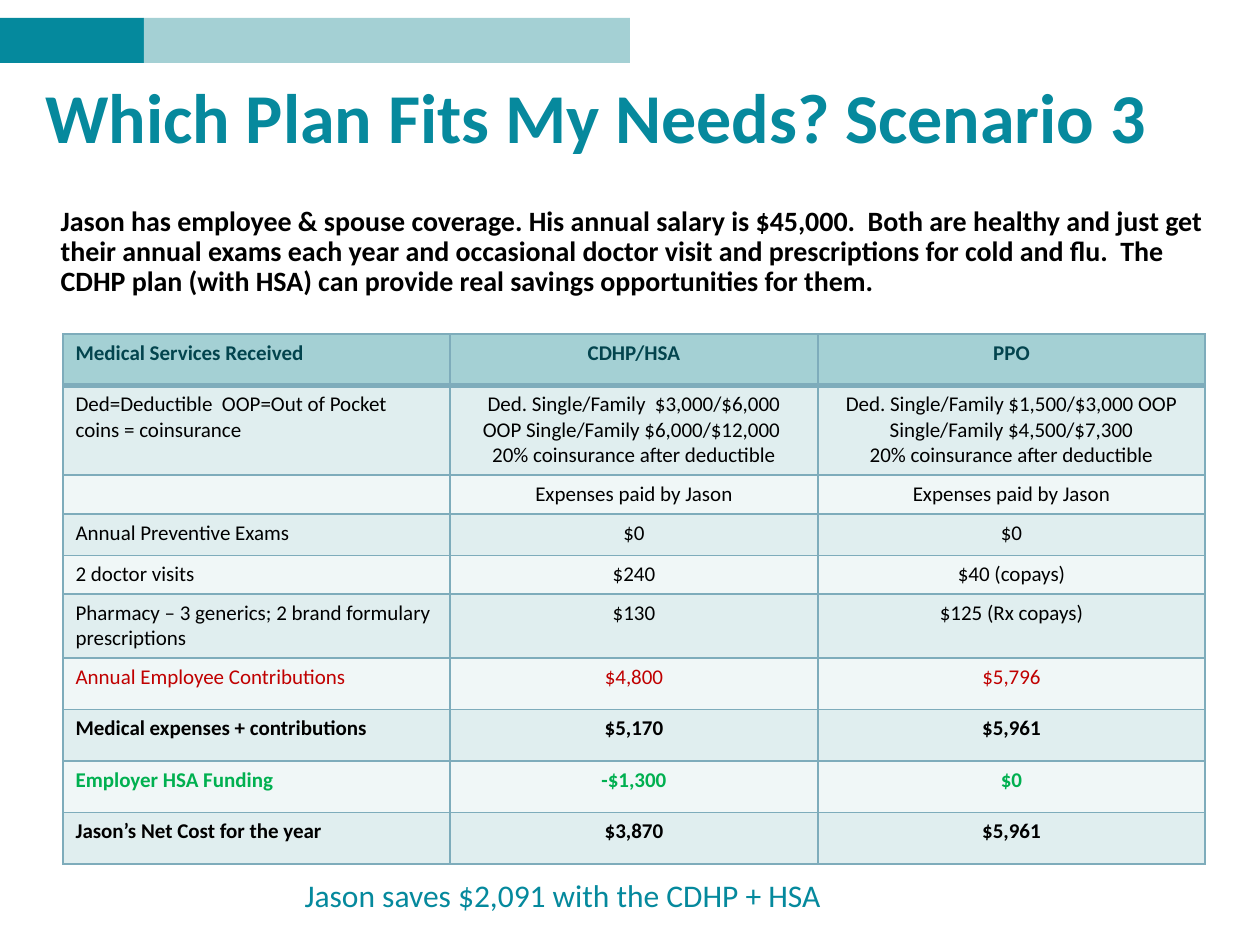
from lxml.etree import SubElement
from pptx import Presentation
from pptx.dml.color import RGBColor
from pptx.enum.shapes import MSO_SHAPE as Preset
from pptx.enum.text import MSO_ANCHOR as Anchor, MSO_AUTO_SIZE as AutoSize, PP_ALIGN as Align
from pptx.oxml.ns import qn
from pptx.util import Cm, Pt

TEAL, PALE, INK, BLACK = "05899D", "A4D0D4", "03444E", "000000"
RED, GREEN, EDGE = "C00000", "00B050", "7EACBB"
BANDS = ("E0EEEF", "F0F7F7")


def color(value):
    return RGBColor.from_string(value)


class SlideBuilder:
    font = "Calibri"

    def __init__(self, slide):
        self.slide = slide

    def add_text(self, paragraph, text, size, ink, bold=False, align=Align.LEFT):
        paragraph.alignment = align
        run = paragraph.add_run()
        run.text = text
        run.font.name, run.font.size, run.font.bold = self.font, Pt(size), bold
        run.font.color.rgb = color(ink)

    def bar(self, left, width, fill):
        shape = self.slide.shapes.add_shape(
            Preset.RECTANGLE, Cm(left), Cm(0.36), Cm(width), Cm(0.91))
        shape.shadow.inherit = False
        shape.fill.solid()
        shape.fill.fore_color.rgb = color(fill)
        shape.line.fill.background()

    def placeholder(self, index, box, text, size, ink, anchor, before=0):
        holder = self.slide.placeholders[index]
        holder.left, holder.top, holder.width, holder.height = map(Cm, box)
        frame = holder.text_frame
        frame.auto_size, frame.vertical_anchor = AutoSize.NONE, anchor
        paragraph = frame.paragraphs[0]
        paragraph.line_spacing, paragraph.space_before = 0.9, Pt(before)
        self.add_text(paragraph, text, size, ink, bold=True)
        # No bullet and no hanging indent
        properties = paragraph._p.get_or_add_pPr()
        properties.set("marL", "0")
        properties.set("indent", "0")
        SubElement(properties, qn("a:buNone"))

    def note(self, box, text, size, ink):
        frame = self.slide.shapes.add_textbox(*map(Cm, box)).text_frame
        frame.word_wrap, frame.auto_size = True, AutoSize.SHAPE_TO_FIT_TEXT
        self.add_text(frame.paragraphs[0], text, size, ink)

    def borders(self, cell, top, bottom):
        properties = cell._tc.get_or_add_tcPr()
        for side, width in (("L", 1), ("R", 1), ("T", top), ("B", bottom)):
            line = SubElement(properties, qn(f"a:ln{side}"), w=str(int(Pt(width))))
            SubElement(SubElement(line, qn("a:solidFill")), qn("a:srgbClr"), val=EDGE)

    def cell(self, cell, text, fill, ink, bold, align, top, bottom):
        self.borders(cell, top, bottom)
        cell.fill.solid()
        cell.fill.fore_color.rgb = color(fill)
        frame = cell.text_frame
        if not text:
            SubElement(frame.paragraphs[0]._p, qn("a:endParaRPr"), sz="1200")
            return
        for number, line in enumerate(text.split("\n")):
            paragraph = frame.add_paragraph() if number else frame.paragraphs[0]
            self.add_text(paragraph, line, 12, ink, bold, align)

    def table(self, left, top, widths, rows):
        holder = self.slide.shapes.add_table(
            len(rows), len(widths), Cm(left), Cm(top), Cm(sum(widths)), Cm(10.59))
        table = holder.table
        table.first_row = table.horz_banding = False
        for column, width in zip(table.columns, widths):
            column.width = Cm(width)
        for r, (height, ink, bold, *texts) in enumerate(rows):
            table.rows[r].height = Cm(height)
            fill = BANDS[(r - 1) % 2] if r else PALE
            for c, text in enumerate(texts):
                self.cell(table.cell(r, c), text, fill, ink, bold,
                          Align.CENTER if c else Align.LEFT,
                          top=3 if r == 1 else 1, bottom=1 if r else 3)
        holder.height = Cm(10.59)


# Row height, text colour, bold, then the three cells
COSTS = [
    (1.04, INK, True, "Medical Services Received", "CDHP/HSA", "PPO"),
    (1.04, BLACK, False, "Ded=Deductible  OOP=Out of Pocket  coins = coinsurance",
     " Ded. Single/Family  $3,000/$6,000 \nOOP Single/Family $6,000/$12,000 \n"
     "20% coinsurance after deductible",
     "Ded. Single/Family $1,500/$3,000 OOP Single/Family $4,500/$7,300\n"
     "20% coinsurance after deductible"),
    (0.79, BLACK, False, "", "Expenses paid by Jason", "Expenses paid by Jason"),
    (0.84, BLACK, False, "Annual Preventive Exams", "$0", "$0"),
    (0.61, BLACK, False, "2 doctor visits", "$240", "$40 (copays)"),
    (1.04, BLACK, False, "Pharmacy – 3 generics; 2 brand formulary prescriptions",
     "$130", "$125 (Rx copays)"),
    (1.04, RED, False, "Annual Employee Contributions", "$4,800", "$5,796"),
    (1.04, BLACK, True, "Medical expenses + contributions", "$5,170", "$5,961"),
    (1.04, GREEN, True, "Employer HSA Funding", "-$1,300", "$0"),
    (1.04, BLACK, True, "Jason’s Net Cost for the year", "$3,870", "$5,961"),
]


def main():
    deck = Presentation()
    deck.slide_width, deck.slide_height = Cm(25.4), Cm(19.05)
    scenario = SlideBuilder(deck.slides.add_slide(deck.slide_layouts[1]))

    # Header band
    scenario.bar(0, 2.9, TEAL)
    scenario.bar(2.9, 9.8, PALE)

    # Title and situation
    scenario.placeholder(0, (0.66, 1.02, 22.99, 2.82),
                         "Which Plan Fits My Needs? Scenario 3", 40, "06899D", Anchor.MIDDLE)
    scenario.placeholder(
        1, (0.97, 3.84, 23.6, 2.29),
        "Jason has employee & spouse coverage. His annual salary is $45,000.  Both are "
        "healthy and just get their annual exams each year and occasional doctor visit and "
        "prescriptions for cold and flu.  The CDHP plan (with HSA) can provide real savings "
        "opportunities for them.", 16, BLACK, Anchor.BOTTOM, before=10)

    # Cost comparison and conclusion
    scenario.table(1.27, 6.73, (7.8, 7.42, 7.8), COSTS)
    scenario.note((5.89, 17.53, 13.64, 1.02), "Jason saves $2,091 with the CDHP + HSA", 18, TEAL)

    deck.save("out.pptx")


if __name__ == "__main__":
    main()
